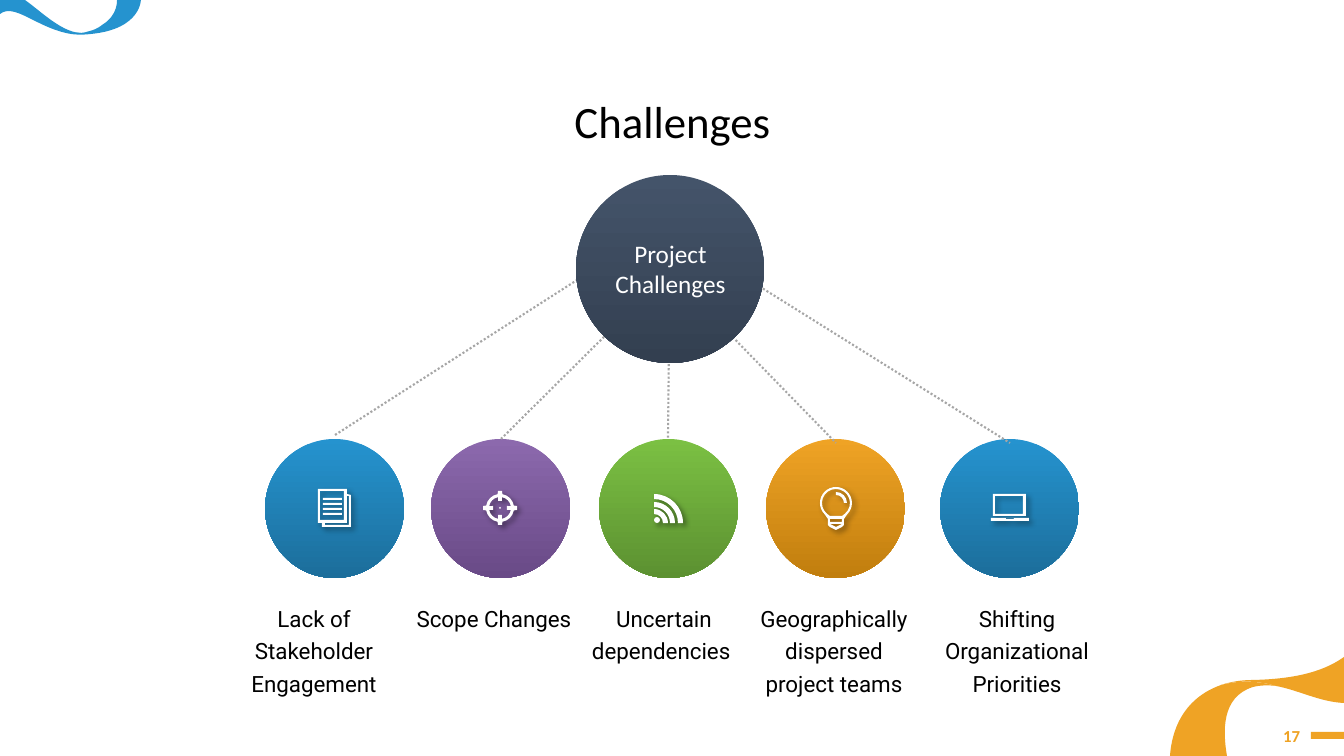
from math import ceil, cos, radians, sin, tan

from lxml.etree import SubElement
from pptx import Presentation
from pptx.dml.color import RGBColor
from pptx.enum.dml import MSO_LINE
from pptx.enum.shapes import MSO_CONNECTOR, MSO_SHAPE
from pptx.enum.text import MSO_ANCHOR, MSO_AUTO_SIZE, PP_ALIGN
from pptx.oxml.ns import qn
from pptx.util import Emu, Pt

BLACK = RGBColor(0x00, 0x00, 0x00)
WHITE = RGBColor(0xFF, 0xFF, 0xFF)
GRAY = RGBColor(0xA6, 0xA6, 0xA6)
SLATE, DARK_SLATE = RGBColor(0x44, 0x54, 0x6A), RGBColor(0x33, 0x3F, 0x50)
BLUE, DARK_BLUE = RGBColor(0x25, 0x93, 0xCF), RGBColor(0x1C, 0x6E, 0x9B)
PURPLE, DARK_PURPLE = RGBColor(0x8C, 0x69, 0xAD), RGBColor(0x69, 0x4A, 0x87)
GREEN, DARK_GREEN = RGBColor(0x7B, 0xC0, 0x43), RGBColor(0x5C, 0x91, 0x31)
ORANGE, DARK_ORANGE = RGBColor(0xEF, 0xA3, 0x25), RGBColor(0xC1, 0x7E, 0x0E)

# Content: text, label left, label height, circle left, colours, connector from, to
CHALLENGES = [
    ("Lack of Stakeholder Engagement", 220, 107, 265, BLUE, DARK_BLUE, (599, 266), (335, 435)),
    ("Scope Changes", 400, 41, 431, PURPLE, DARK_PURPLE, (619, 322), (501, 439)),
    ("Uncertain dependencies ", 570, 74, 599, GREEN, DARK_GREEN, (669, 343), (668, 439)),
    ("Geographically dispersed project teams", 740, 107, 766, ORANGE, DARK_ORANGE,
     (718, 322), (836, 443)),
    ("Shifting Organizational Priorities", 923, 107, 940, BLUE, DARK_BLUE, (738, 273), (1010, 443)),
]
LABEL_TOP, LABEL_WIDTH = 595, 188
CIRCLE_TOP, CIRCLE_SIZE = 439, 139

# Outlines: a pair is a straight step, six numbers are a curve
RIBBONS = [
    (ORANGE, [(1253, 687), (1261, 685, 1268, 685, 1276, 686), (1276, 686, 1250, 677, 1221, 685),
              (1176, 701, 1171, 742, 1170, 756), (1227, 756), (1223, 732, 1221, 697, 1253, 687)]),
    (ORANGE, [(1253, 680), (1241, 680, 1230, 682, 1221, 685), (1250, 677, 1276, 686, 1276, 686),
              (1298, 690, 1320, 702, 1344, 703), (1344, 657), (1326, 670, 1299, 679, 1253, 680)]),
    (BLUE, [(141, -1), (117, -1), (117, -1, 119, 15, 102, 25), (102, 25, 98, 29, 90, 31),
            (86, 32, 84, 33, 81, 33), (77, 33, 72, 33, 66, 33), (74, 35, 82, 35, 91, 34),
            (142, 29, 141, -1, 141, -1)]),
    (BLUE, [(81, 33), (51, 32, 19, -17, 0, -8), (0, 14), (14, 3, 35, 26, 66, 33),
            (72, 33, 76, 33, 81, 33)]),
]


def px(value):
    return Emu(round(value * 914400 / 100.8))


# Outline helpers, each returning a list of steps
def arc(x, y, radius, start, end, largest=90):
    count = ceil(abs(end - start) / largest)
    turn = radians(end - start) / count
    pull = 4 / 3 * tan(turn / 4)
    steps = [(x + radius * cos(radians(start)), y + radius * sin(radians(start)))]
    for i in range(count):
        a = radians(start) + i * turn
        b = a + turn
        steps.append((x + radius * (cos(a) - pull * sin(a)), y + radius * (sin(a) + pull * cos(a)),
                      x + radius * (cos(b) + pull * sin(b)), y + radius * (sin(b) - pull * cos(b)),
                      x + radius * cos(b), y + radius * sin(b)))
    return steps


def box(left, top, right, bottom):
    return [(left, top), (right, top), (right, bottom), (left, bottom)]


def band(x, y, outer, inner, start=-90, end=0):
    return arc(x, y, outer, start, end) + arc(x, y, inner, end, start)


def crosshair_edge(x, y, radius, tip, half_width=2):
    steps = []
    for turn in (0, 90, 180, 270):
        steps += arc(x, y, radius, turn + 10, turn + 80)
        along_x, along_y = cos(radians(turn + 90)), sin(radians(turn + 90))
        for side in (half_width, -half_width):
            steps.append((x + tip * along_x + side * along_y,
                          y + tip * along_y - side * along_x))
    return steps


# Icons: nested outlines cut holes
DOCUMENT = [
    box(318, 489, 347, 523), box(320, 491, 344, 520),
    *[box(323, top, 342, top + 2) for top in range(498, 514, 5)],
    [(347, 494), (351, 495), (351, 527), (322, 527), (322, 523), (325, 523),
     (325, 525), (349, 525), (349, 496), (347, 496)],
]
CROSSHAIR = [crosshair_edge(500, 508, 14, 17), crosshair_edge(500, 508, 11, 7),
             arc(500, 508, 1, 0, 360)]
FEED = [arc(657, 520, 3, 0, 360),
        *[band(654, 523, outer, outer - 5) for outer in (14, 21, 29)]]
BULB = [
    arc(836, 503, 16, 135, 405, 45) + [(844, 519), (844, 525), (842, 527), (836, 530),
                                       (830, 527), (828, 525), (828, 519)],
    arc(836, 503, 14, 130, 410) + [(842, 516), (830, 516)],
    box(830, 519, 842, 522), [(830, 524), (842, 524), (836, 527)],
    band(836, 503, 11, 8),
]
LAPTOP = [box(993, 494, 1026, 516), box(995, 496, 1023, 514),
          box(991, 518, 1029, 521), box(1006, 518, 1014, 519)]

presentation = Presentation()
presentation.slide_width, presentation.slide_height = px(1344), px(756)
slide = presentation.slides.add_slide(presentation.slide_layouts[6])


def finish(shape, color):
    shape.shadow.inherit = False
    shape.fill.solid()
    shape.fill.fore_color.rgb = color
    shape.line.fill.background()


def add_outline(contours, color):
    contours = [[tuple(px(value) for value in step) for step in contour] for contour in contours]
    builder = slide.shapes.build_freeform(*contours[0][0])
    for number, contour in enumerate(contours):
        if number:
            builder.move_to(*contour[0])
        builder.add_line_segments([step[-2:] for step in contour[1:]], close=True)
    shape = builder.convert_to_shape()
    finish(shape, color)

    # Bend the steps that are curves
    drawn = [element for element in shape._element.iter(qn("a:moveTo"), qn("a:lnTo"))]
    steps = []
    for contour in contours:
        steps += contour
        if contour[-1][-2:] != contour[0]:
            steps.append(contour[0])
    if len(drawn) != len(steps):
        steps = [step for contour in contours for step in contour]
    for element, step in zip(drawn, steps):
        if len(step) == 6:
            curve = element.getparent().makeelement(qn("a:cubicBezTo"))
            for x, y in zip(step[::2], step[1::2]):
                SubElement(curve, qn("a:pt"), x=str(x - shape.left), y=str(y - shape.top))
            element.getparent().replace(element, curve)
    return shape


def add_icon(contours):
    effects = add_outline(contours, WHITE)._element.spPr.find(qn("a:effectLst"))
    shadow = SubElement(effects, qn("a:outerShdw"), blurRad=str(Pt(4)), dist=str(Pt(3)),
                        dir="2700000", algn="tl", rotWithShape="0")
    color = SubElement(shadow, qn("a:srgbClr"), val="000000")
    SubElement(color, qn("a:alpha"), val="40000")


def add_circle(left, top, size, light, dark):
    shape = slide.shapes.add_shape(MSO_SHAPE.OVAL, px(left), px(top), px(size), px(size))
    finish(shape, light)
    shape.fill.gradient()
    shape.fill.gradient_angle = 270
    for stop, position, color in zip(shape.fill.gradient_stops, (0, 1), (light, dark)):
        stop.position = position
        stop.color.rgb = color


def add_text(text, left, top, width, height, size, color=BLACK, font="Calibri",
             align=PP_ALIGN.CENTER, bold=False, spacing=None, wrap=True, grow=True):
    frame = slide.shapes.add_textbox(px(left), px(top), px(width), px(height)).text_frame
    frame.word_wrap = wrap
    frame.auto_size = MSO_AUTO_SIZE.SHAPE_TO_FIT_TEXT if grow else MSO_AUTO_SIZE.NONE
    frame.vertical_anchor = MSO_ANCHOR.TOP if grow else MSO_ANCHOR.MIDDLE
    paragraph = frame.paragraphs[0]
    paragraph.alignment, paragraph.line_spacing = align, spacing
    run = paragraph.add_run()
    run.text = text
    run.font.name, run.font.size, run.font.bold = font, Pt(size), bold
    run.font.color.rgb = color


def add_dotted_line(start, end):
    connector = slide.shapes.add_connector(
        MSO_CONNECTOR.STRAIGHT, *[px(value) for value in start + end])
    connector.line.color.rgb = GRAY
    connector.line.width = Pt(1.5)
    connector.line.dash_style = MSO_LINE.ROUND_DOT
    SubElement(connector._element.spPr, qn("a:effectLst"))


# Title, page number and corner ribbons
add_text("Challenges", 545, 89, 255, 65, 32, wrap=False)
add_text("17", 1236, 716, 74, 40, 12, ORANGE, align=PP_ALIGN.RIGHT, bold=True, grow=False)
finish(slide.shapes.add_shape(MSO_SHAPE.RECTANGLE, px(1311), px(732), px(33), px(7)), ORANGE)
for color, steps in RIBBONS:
    add_outline([steps], color)

# Challenge circles with their labels, then the lines over them
for text, label_left, label_height, circle_left, light, dark, _, _ in CHALLENGES:
    add_text(text, label_left, LABEL_TOP, LABEL_WIDTH, label_height, 16,
             font="Roboto", spacing=1.2)
    add_circle(circle_left, CIRCLE_TOP, CIRCLE_SIZE, light, dark)
for *_, start, end in CHALLENGES:
    add_dotted_line(start, end)

# Hub and icons
add_circle(576, 175, 188, SLATE, DARK_SLATE)
add_text("Project Challenges", 575, 233, 191, 72, 18, WHITE)
for icon in (DOCUMENT, CROSSHAIR, FEED, BULB, LAPTOP):
    add_icon(icon)

presentation.save("out.pptx")
